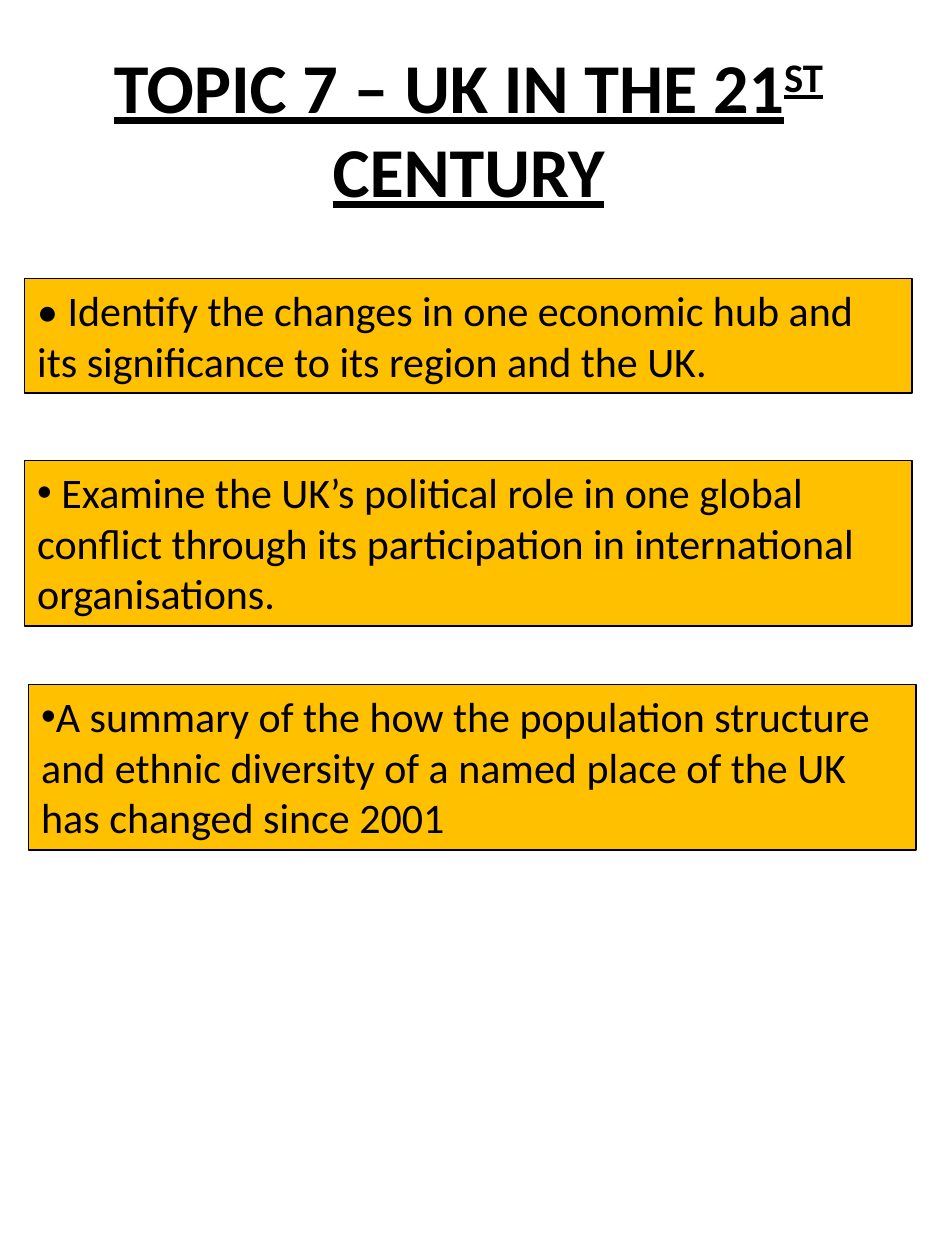
import pptx
import pptx.dml.color
import pptx.enum.shapes
import pptx.enum.text
import pptx.oxml.ns
import pptx.util
from lxml import etree

Pt = pptx.util.Pt


def colour(value):
    return pptx.dml.color.RGBColor.from_string(value)


class TopicSheet:
    font = "Calibri"
    ink = "000000"
    panel = "FFC000"
    title_size = 40
    body_size = 24

    def __init__(self, deck):
        self.slide = deck.slides.add_slide(deck.slide_layouts[6])

    def add_span(self, para, text, size, heading=False):
        span = para.add_run()
        span.text = text
        span.font.name = self.font
        span.font.size = Pt(size)
        span.font.color.rgb = colour(self.ink)
        if heading:
            span.font.bold = True
            span.font.underline = True
        return span

    def add_bullet(self, para):
        properties = para._p.get_or_add_pPr()
        font = etree.SubElement(properties, pptx.oxml.ns.qn("a:buFont"))
        font.set("typeface", "Arial")
        mark = etree.SubElement(properties, pptx.oxml.ns.qn("a:buChar"))
        mark.set("char", "•")

    def add_title(self, left, top, width, height, parts):
        """Parts are pairs of text and whether it is superscript."""
        box = self.slide.shapes.add_textbox(Pt(left), Pt(top), Pt(width), Pt(height))
        frame = box.text_frame
        frame.word_wrap = True
        frame.vertical_anchor = pptx.enum.text.MSO_ANCHOR.MIDDLE
        para = frame.paragraphs[0]
        para.alignment = pptx.enum.text.PP_ALIGN.CENTER
        for text, raised in parts:
            span = self.add_span(para, text, self.title_size, heading=True)
            if raised:
                span._r.get_or_add_rPr().set("baseline", "30000")

    def add_panel(self, left, top, width, height, text, bullet):
        box = self.slide.shapes.add_shape(
            pptx.enum.shapes.MSO_SHAPE.RECTANGLE,
            Pt(left), Pt(top), Pt(width), Pt(height))
        box.shadow.inherit = False
        box.fill.solid()
        box.fill.fore_color.rgb = colour(self.panel)
        box.line.color.rgb = colour(self.ink)
        box.line.width = Pt(0.75)
        frame = box.text_frame
        frame.word_wrap = True
        frame.auto_size = pptx.enum.text.MSO_AUTO_SIZE.SHAPE_TO_FIT_TEXT
        frame.vertical_anchor = pptx.enum.text.MSO_ANCHOR.TOP
        para = frame.paragraphs[0]
        para.alignment = pptx.enum.text.PP_ALIGN.LEFT
        if bullet:
            self.add_bullet(para)
        self.add_span(para, text, self.body_size)


def main():
    deck = pptx.Presentation()
    deck.slide_width, deck.slide_height = Pt(540), Pt(720)
    sheet = TopicSheet(deck)

    left, width = 14.2, 507
    sheet.add_title(left, 11.5, width, 123, [
        ("TOPIC 7 – UK IN THE 21", False), ("ST", True), (" CENTURY", False)])

    objectives = [
        (left, 159.2, 65.4, False,
         "• Identify the changes in one economic hub and its significance "
         "to its region and the UK."),
        (left, 263.3, 94.5, True,
         " Examine the UK’s political role in one global conflict through "
         "its participation in international organisations."),
        (16.5, 391.2, 94.5, True,
         "A summary of the how the population structure and ethnic diversity "
         "of a named place of the UK has changed since 2001"),
    ]
    for panel_left, top, height, bullet, text in objectives:
        sheet.add_panel(panel_left, top, width, height, text, bullet)

    deck.save("out.pptx")


if __name__ == "__main__":
    main()
